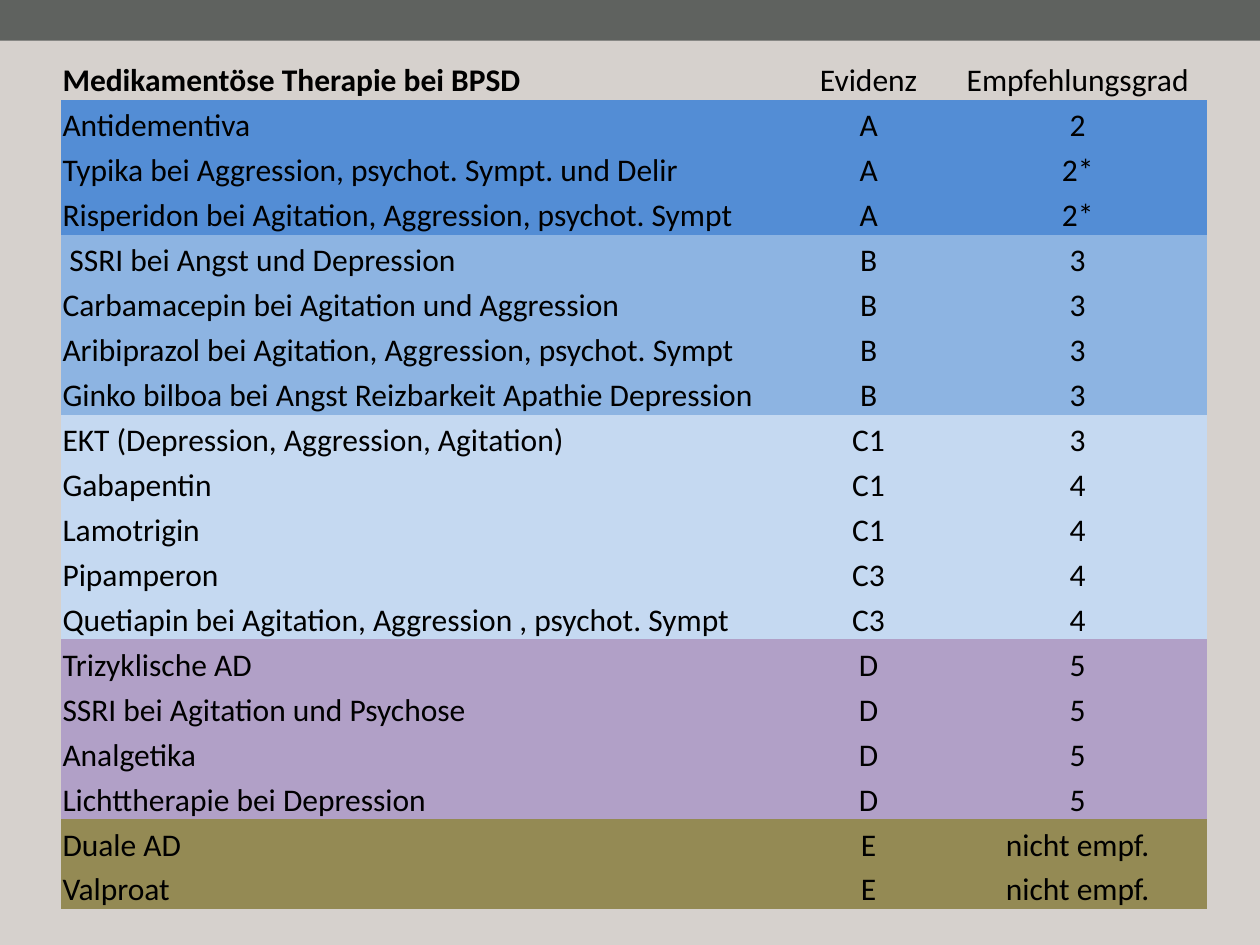
from pptx import Presentation
from pptx import util as u
from pptx.dml.color import RGBColor
from pptx.enum import shapes, text

HEADER = ("Medikamentöse Therapie bei BPSD", "Evidenz", "Empfehlungsgrad")
# Each group of rows shares one fill colour.
GROUPS = [
    ("538DD5", [
        ("Antidementiva", "A", "2"),
        ("Typika bei Aggression, psychot. Sympt. und Delir", "A", "2*"),
        ("Risperidon bei Agitation, Aggression, psychot. Sympt", "A", "2*"),
    ]),
    ("8DB4E2", [
        ("SSRI bei Angst und Depression", "B", "3"),
        ("Carbamacepin bei Agitation und Aggression", "B", "3"),
        ("Aribiprazol bei Agitation, Aggression, psychot. Sympt", "B", "3"),
        ("Ginko bilboa bei Angst Reizbarkeit Apathie Depression", "B", "3"),
    ]),
    ("C5D9F1", [
        ("EKT (Depression, Aggression, Agitation)", "C1", "3"),
        ("Gabapentin", "C1", "4"),
        ("Lamotrigin", "C1", "4"),
        ("Pipamperon", "C3", "4"),
        ("Quetiapin bei Agitation, Aggression , psychot. Sympt", "C3", "4"),
    ]),
    ("B1A0C7", [
        ("Trizyklische AD", "D", "5"),
        ("SSRI bei Agitation und Psychose", "D", "5"),
        ("Analgetika", "D", "5"),
        ("Lichttherapie bei Depression", "D", "5"),
    ]),
    ("948A54", [
        ("Duale AD", "E", "nicht empf."),
        ("Valproat", "E", "nicht empf."),
    ]),
]
INDENTED = "SSRI bei Angst und Depression"
COLUMN_WIDTHS = (14.68, 3.2, 5.23)
ROW_HEIGHT = 0.907
PLAIN_TABLE_STYLE = "{2D5ABB26-0587-4C30-8999-92F81FD0307C}"


def paint(fill, colour):
    fill.solid()
    fill.fore_color.rgb = RGBColor.from_string(colour)


def add_top_band(page, width):
    band = page.shapes.add_shape(shapes.MSO_SHAPE.RECTANGLE, 0, 0, width, u.Cm(0.82))
    band.shadow.inherit = False
    paint(band.fill, "5F625F")
    band.line.fill.background()


def fill_cell(cell, content, colour, centred, bold):
    """Write one cell; a colour of None leaves it transparent."""
    cell.margin_left = u.Cm(0.17 if content == INDENTED else 0.03)
    cell.margin_right = cell.margin_top = u.Cm(0.03)
    cell.margin_bottom = 0
    cell.vertical_anchor = text.MSO_ANCHOR.BOTTOM
    if colour:
        paint(cell.fill, colour)
    else:
        cell.fill.background()
    cell.text_frame.text = content
    para = cell.text_frame.paragraphs[0]
    para.alignment = text.PP_ALIGN.CENTER if centred else text.PP_ALIGN.LEFT
    font = para.runs[0].font
    font.name, font.size, font.bold = "Calibri", u.Pt(18), bold
    font.color.rgb = RGBColor.from_string("000000")


def add_therapy_table(page):
    rows = [(None, HEADER)]
    rows += [(colour, row) for colour, group in GROUPS for row in group]
    table = page.shapes.add_table(
        len(rows), len(HEADER), u.Cm(1.23), u.Cm(1.1),
        u.Cm(sum(COLUMN_WIDTHS)), u.Cm(ROW_HEIGHT * len(rows))).table
    table.first_row = table.horz_banding = False
    table._tbl.tblPr[0].text = PLAIN_TABLE_STYLE
    for column, width in zip(table.columns, COLUMN_WIDTHS):
        column.width = u.Cm(width)
    for i, (colour, row) in enumerate(rows):
        table.rows[i].height = u.Cm(ROW_HEIGHT)
        for j, content in enumerate(row):
            fill_cell(table.cell(i, j), content, colour, centred=j > 0, bold=i == j == 0)


def main():
    deck = Presentation()
    deck.slide_width, deck.slide_height = u.Cm(25.4), u.Cm(19.05)
    page = deck.slides.add_slide(deck.slide_layouts[6])
    paint(page.background.fill, "D6D1CD")
    add_top_band(page, deck.slide_width)
    add_therapy_table(page)
    deck.save("out.pptx")


if __name__ == "__main__":
    main()
